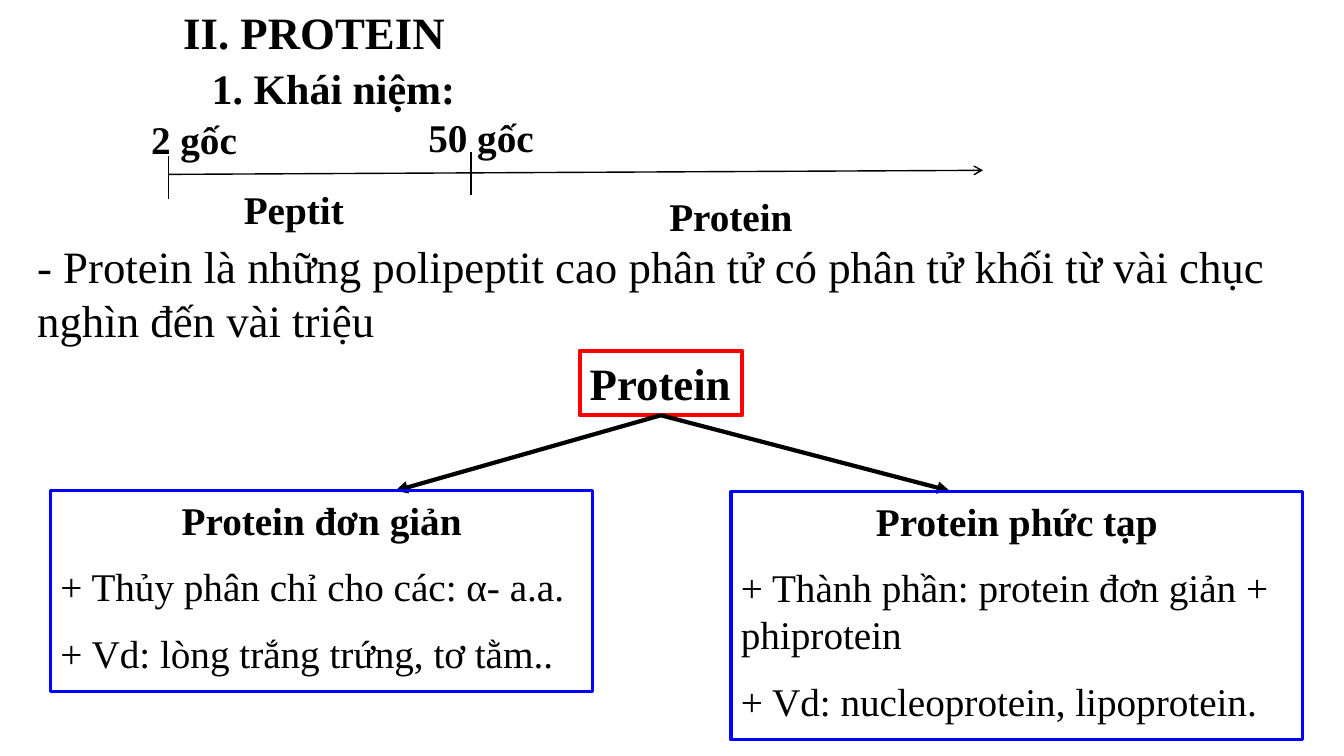
from lxml import etree
from pptx import Presentation
from pptx import util as u
from pptx.dml.color import RGBColor
from pptx.enum import shapes, text
from pptx.oxml.ns import qn


def color(value):
    """Turn a hex string into a colour."""
    return RGBColor.from_string(value)


def write(frame, content, size=28, bold=False, align=text.PP_ALIGN.LEFT, before=0):
    """Fill the first empty paragraph or add a new one."""
    paragraph = frame.paragraphs[0]
    if paragraph.runs:
        paragraph = frame.add_paragraph()
    paragraph.alignment = align
    paragraph.space_before = u.Pt(before)
    run = paragraph.add_run()
    run.text = content
    run.font.name = "Times New Roman"
    run.font.size = u.Pt(size)
    run.font.bold = bold
    run.font.color.rgb = color("000000")


class Board:
    """Holds the style and the current slide."""

    def __init__(self, slide):
        """Keep the slide and set its background."""
        self.slide = slide
        self.ink = "000000"
        slide.background.fill.solid()
        slide.background.fill.fore_color.rgb = color("FFFFFF")

    def prepare(self, shape, wrap):
        """Set wrapping and sizing, and return the text frame."""
        frame = shape.text_frame
        frame.word_wrap = wrap
        frame.auto_size = text.MSO_AUTO_SIZE.SHAPE_TO_FIT_TEXT
        frame.vertical_anchor = text.MSO_ANCHOR.TOP
        return frame

    def label(self, place, content, wrap=False, **style):
        """Add a text box with one paragraph."""
        shape = self.slide.shapes.add_textbox(*map(u.Inches, place))
        write(self.prepare(shape, wrap), content, **style)

    def box(self, place, outline, width, heading, points=(), wrap=True, **style):
        """Add an outlined rectangle with a heading and points."""
        shape = self.slide.shapes.add_shape(
            shapes.MSO_SHAPE.RECTANGLE, *map(u.Inches, place))
        shape.shadow.inherit = False
        shape.fill.background()
        shape.line.color.rgb = color(outline)
        shape.line.width = u.Pt(width)
        frame = self.prepare(shape, wrap)
        write(frame, heading, bold=True, **style)
        for point in points:
            write(frame, point, before=14)
        return shape

    def line(self, start, end, width=1, head=None, source=None):
        """Add a straight line, with an arrowhead or a joined start if given."""
        connector = self.slide.shapes.add_connector(
            shapes.MSO_CONNECTOR.STRAIGHT, *map(u.Inches, (*start, *end)))
        connector.line.color.rgb = color(self.ink)
        connector.line.width = u.Pt(width)
        if head:
            outline = connector.line._get_or_add_ln()
            etree.SubElement(outline, qn("a:tailEnd"), type=head)
        etree.SubElement(connector._element.spPr, qn("a:effectLst"))
        if source:
            connector.begin_connect(source, 2)


def main():
    """Build the slide and save it."""
    presentation = Presentation()
    presentation.slide_width = u.Inches(13.33)
    presentation.slide_height = u.Inches(7.5)
    board = Board(presentation.slides.add_slide(presentation.slide_layouts[6]))
    center = text.PP_ALIGN.CENTER

    board.label((1.67, 0, 2.89, 0.63), "II. PROTEIN", wrap=True,
                size=32, bold=True, align=center)
    board.label((2, 0.57, 7.75, 0.6), "1. Khái niệm:", wrap=True, size=30, bold=True)
    board.label((0.27, 2.32, 12.67, 1.18),
                "- Protein là những polipeptit cao phân tử có phân tử khối "
                "từ vài chục nghìn đến vài triệu", wrap=True, size=32)

    protein = board.box((5.75, 3.48, 1.61, 0.64), "FF0000", 3, "Protein",
                        wrap=False, size=32)
    for branch_x in (3.92, 9.42):
        board.line((6.5, 4.12), (branch_x, 4.87), 3, "triangle", protein)
    board.box((0.5, 4.87, 5.38, 1.99), "0000FF", 2.25, "Protein đơn giản",
              ("+ Thủy phân chỉ cho các: α- a.a.",
               "+ Vd: lòng trắng trứng, tơ tằm.."), align=center)
    board.box((7.25, 4.88, 5.67, 2.46), "0000FF", 2.25, "Protein phức tạp",
              ("+ Thành phần: protein đơn giản + phiprotein",
               "+ Vd: nucleoprotein, lipoprotein."), align=center)

    board.line((1.67, 1.73), (9.75, 1.69), head="arrow")
    for tick_x, tick_y in ((1.67, 1.55), (4.67, 1.51)):
        board.line((tick_x, tick_y), (tick_x, tick_y + 0.42))
    for left, top, width, content in (
            (1.4, 1.09, 1.06, "2 gốc"), (4.15, 1.08, 1.26, "50 gốc"),
            (2.32, 1.79, 1.21, "Peptit"), (6.54, 1.86, 1.44, "Protein")):
        board.label((left, top, width, 0.57), content, bold=True)

    presentation.save("out.pptx")


if __name__ == "__main__":
    main()
